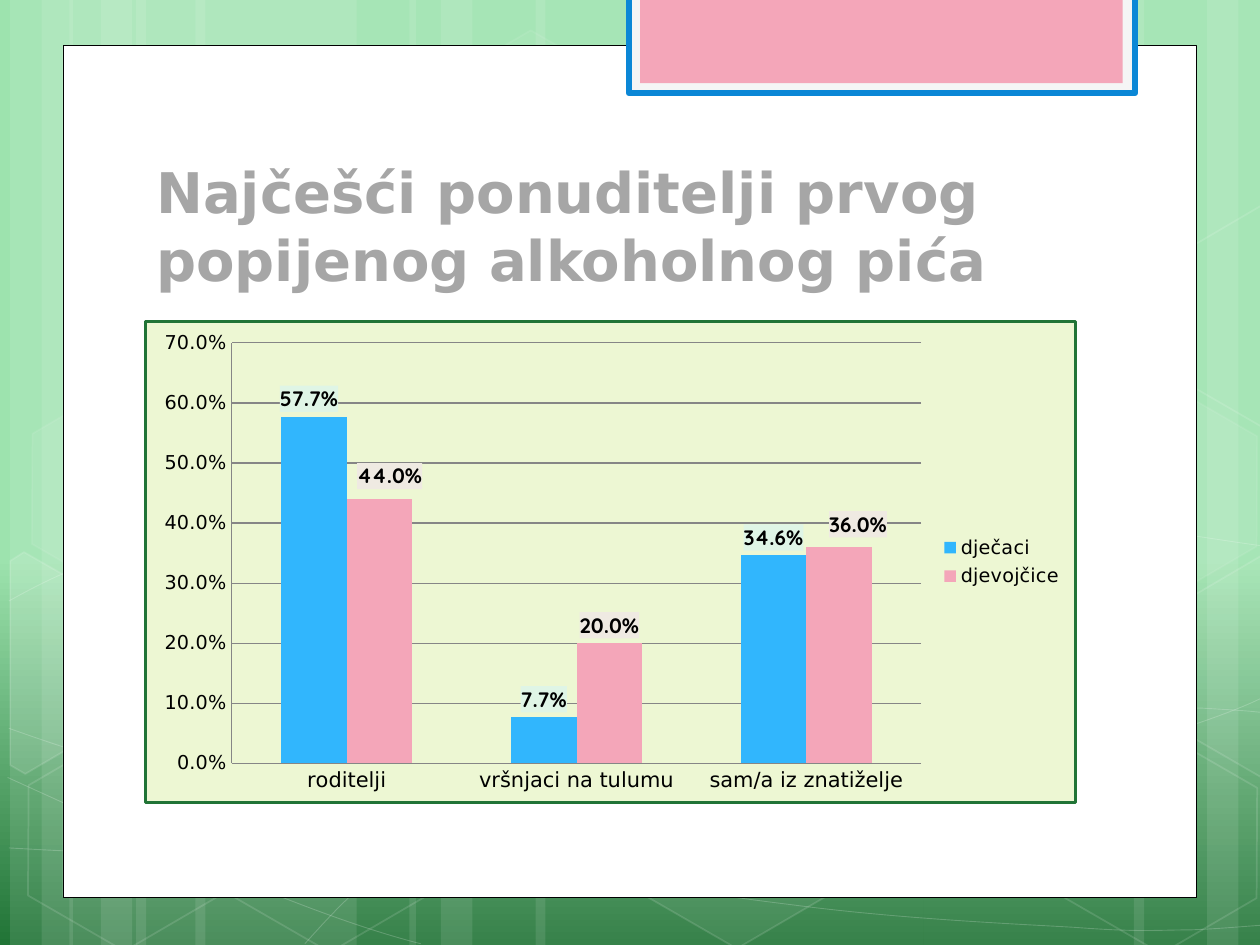
from dataclasses import dataclass
from math import cos, radians, sin

from lxml import etree
from pptx import Presentation
from pptx.chart.data import CategoryChartData
from pptx.dml.color import RGBColor
from pptx.enum.chart import XL_CHART_TYPE, XL_LABEL_POSITION, XL_LEGEND_POSITION, XL_TICK_MARK
from pptx.enum.shapes import MSO_SHAPE
from pptx.enum.text import MSO_ANCHOR, MSO_AUTO_SIZE, PP_ALIGN
from pptx.oxml import parse_xml
from pptx.oxml.ns import nsdecls, qn
from pptx.util import Inches, Pt

RECTANGLE, HEXAGON = MSO_SHAPE.RECTANGLE, MSO_SHAPE.HEXAGON
COLUMN = XL_CHART_TYPE.COLUMN_CLUSTERED
LABEL_ABOVE = XL_LABEL_POSITION.OUTSIDE_END
LEGEND_RIGHT = XL_LEGEND_POSITION.RIGHT
NO_TICKS = XL_TICK_MARK.NONE


@dataclass(frozen=True)
class Theme:
    light: str = "9DE3AE"
    dark: str = "217436"
    white: str = "FFFFFF"
    black: str = "000000"
    title: str = "A6A6A6"
    tab: str = "F5F5F5"
    blue: str = "0B87D6"
    pink: str = "F4A6B9"
    boys: str = "31B6FD"
    chart: str = "EDF7D3"
    grid: str = "868686"
    boys_label: str = "DFF5E6"
    girls_label: str = "EFEAE2"
    font: str = "DejaVu Sans"
    label_font: str = "Quicksand"
    title_size: int = 32
    label_size: int = 12
    axis_size: int = 11


THEME = Theme()
WIDTH, HEIGHT = 10, 7.5
CHART_WIDTH, CHART_HEIGHT = 7.41, 3.84
TILT = 30  # degrees, for all hexagons

# Background bands: left, width
BANDS = [(1.08, 1.75), (0.08, 0.5), (0.33, 0.83), (1.55, 1.75), (0.55, 0.5), (0.8, 0.83),
         (7.33, 1.75), (9.58, 0.5), (9, 0.83), (4.25, 3.08), (3.25, 0.5), (3.5, 0.83)]
# Background waves: start point, then Bézier segments (two controls and an end)
WAVES = [
    [(0.07, 6.73), (0.61, 6.76, 1.15, 6.79, 1.9, 6.78), (2.65, 6.77, 3.58, 6.75, 4.58, 6.65),
     (5.58, 6.55, 7, 6.36, 7.92, 6.17), (8.83, 5.98, 9.77, 5.68, 10.07, 5.51)],
    [(0.07, 4.77), (0.36, 4.61, 0.65, 4.46, 1.21, 4.31), (1.78, 4.16, 2.59, 3.94, 3.47, 3.87),
     (4.36, 3.8, 5.44, 3.79, 6.54, 3.87), (7.64, 3.95, 9.47, 4.26, 10.07, 4.34)],
    [(0.06, 6.17), (1.27, 6.72, 2.47, 7.27, 3.34, 7.49)],
    [(0.07, 5.78), (0.38, 5.89, 0.7, 6, 1.28, 6.16), (1.86, 6.31, 2.73, 6.56, 3.57, 6.73),
     (4.4, 6.9, 5.45, 7.08, 6.28, 7.18), (7.11, 7.29, 8, 7.33, 8.53, 7.36),
     (9.05, 7.4, 9.19, 7.38, 9.45, 7.38), (9.71, 7.37, 9.89, 7.35, 10.07, 7.34)],
    [(2.42, 7.49), (2.6, 7.29, 2.78, 7.09, 3.02, 6.91), (3.26, 6.73, 3.6, 6.53, 3.88, 6.39),
     (4.16, 6.25, 4.33, 6.19, 4.7, 6.09), (5.06, 5.99, 5.73, 5.85, 6.08, 5.78),
     (6.44, 5.71, 6.49, 5.71, 6.8, 5.69), (7.11, 5.66, 7.6, 5.63, 7.94, 5.62),
     (8.29, 5.61, 8.86, 5.62, 8.86, 5.62), (8.86, 5.62, 9.53, 5.62, 9.53, 5.62),
     (9.71, 5.63, 9.88, 5.64, 9.97, 5.65), (10.06, 5.66, 10.03, 5.65, 10.06, 5.66)],
]
# Hexagons: left, top, fill opacity (0 for none), line opacity
HEXAGONS = [(3.34, 0.36, 4, 8), (4.97, 5.89, 6, 12), (0.11, 5.91, 0, 12), (0.14, 3.12, 7, 8),
            (1.74, 5.92, 0, 12), (7.53, 4.53, 10, 12), (8.34, 5.93, 0, 12), (8.34, 3.14, 7, 8)]
# Hexagons cut by the slide's edge: centre, corners after tilting, fill opacity
CUT_HEXAGONS = [
    ((0.36, 5.35), [(0.08, 4.45), (0.19, 4.38), (0.96, 4.82), (0.95, 5.7), (0.2, 6.14),
                    (0.08, 6.07)], 10),
    ((9.85, 5.2), [(9.26, 4.85), (10.01, 4.41), (10.09, 4.46), (10.09, 6.13), (10.02, 6.17),
                   (9.26, 5.73)], 4),
    ((9.85, 2.41), [(9.26, 2.07), (10.01, 1.63), (10.1, 1.68), (10.09, 3.35), (10.02, 3.39),
                    (9.26, 2.95)], 0),
]
CATEGORIES = ["roditelji", "vršnjaci na tulumu", "sam/a iz znatiželje"]
# Series: name, values, colour, label fill, label shifts in inches
SERIES = [
    ("dječaci", [0.577, 0.077, 0.346], THEME.boys, THEME.boys_label,
     [(-0.04, 0), (0, 0), (0, 0)]),
    ("djevojčice", [0.44, 0.2, 0.36], THEME.pink, THEME.girls_label,
     [(0.08, -0.04), (0, 0), (0.15, -0.04)]),
]


def set_opacity(shape, place, opacity):
    if opacity < 100:
        color = shape._element.spPr.find(f"{place}{qn('a:solidFill')}/{qn('a:srgbClr')}")
        etree.SubElement(color, qn("a:alpha")).set("val", str(opacity * 1000))


def paint(shape, fill=None, opacity=100, line=None, line_width=1, line_opacity=100):
    shape.shadow.inherit = False
    if fill and opacity:
        shape.fill.solid()
        shape.fill.fore_color.rgb = RGBColor.from_string(fill)
        set_opacity(shape, "", opacity)
    else:
        shape.fill.background()
    if line:
        shape.line.width = Pt(line_width)
        shape.line.color.rgb = RGBColor.from_string(line)
        set_opacity(shape, qn("a:ln") + "/", line_opacity)
    else:
        shape.line.fill.background()


def add_box(slide, left, top, width, height, kind=RECTANGLE, **style):
    shape = slide.shapes.add_shape(kind, *map(Inches, (left, top, width, height)))
    paint(shape, **style)
    return shape


def add_outline(slide, points, close, **style):
    corners = [(Inches(x), Inches(y)) for x, y in points]
    builder = slide.shapes.build_freeform(*corners[0])
    builder.add_line_segments(corners[1:], close=close)
    shape = builder.convert_to_shape()
    paint(shape, **style)
    return shape


def add_wave(slide, wave):
    points = [wave[0]] + [segment[i:i + 2] for segment in wave[1:] for i in (0, 2, 4)]
    shape = add_outline(slide, points, False,
                        line=THEME.white, line_width=0.5, line_opacity=20)
    # Join each three straight steps into one Bézier segment
    lines = list(shape._element.iter(qn("a:lnTo")))
    for start in range(0, len(lines), 3):
        curve = etree.Element(qn("a:cubicBezTo"))
        lines[start].addprevious(curve)
        for step in lines[start:start + 3]:
            curve.append(step[0])
            step.getparent().remove(step)


def turn(point, centre, degrees):
    x, y = point[0] - centre[0], point[1] - centre[1]
    cosine, sine = cos(radians(degrees)), sin(radians(degrees))
    return centre[0] + x * cosine - y * sine, centre[1] + x * sine + y * cosine


def set_background(slide):
    slide.background.fill.gradient()
    gradient = slide.background._element.find(".//" + qn("a:gradFill"))
    stops = "".join(f'<a:gs pos="{share * 1000}"><a:srgbClr val="{color}"/></a:gs>'
                    for share, color in [(0, THEME.light), (59, THEME.light), (100, THEME.dark)])
    gradient.getparent().replace(gradient, parse_xml(
        f'<a:gradFill {nsdecls("a")} rotWithShape="1"><a:gsLst>{stops}</a:gsLst>'
        '<a:lin ang="5400000" scaled="0"/></a:gradFill>'))


def add_decoration(slide):
    for left, width in BANDS:
        add_box(slide, left, 0, width, HEIGHT, fill=THEME.white, opacity=10)
    for wave in WAVES:
        add_wave(slide, wave)
    for left, top, opacity, line_opacity in HEXAGONS:
        hexagon = add_box(slide, left, top, 1.75, 1.52, HEXAGON, fill=THEME.white,
                          opacity=opacity, line=THEME.white, line_opacity=line_opacity)
        hexagon.rotation = TILT
        hexagon.adjustments[0] = 0.285
    for centre, corners, opacity in CUT_HEXAGONS:
        upright = [turn(corner, centre, -TILT) for corner in corners]
        add_outline(slide, upright, True, fill=THEME.white, opacity=opacity,
                    line=THEME.white, line_opacity=12).rotation = TILT


def set_title(slide, text):
    title = slide.shapes.title
    title.left, title.top, title.width, title.height = map(Inches, (1.14, 1.12, 7.68, 1.25))
    frame = title.text_frame
    frame.text = text
    frame.auto_size, frame.vertical_anchor = MSO_AUTO_SIZE.NONE, MSO_ANCHOR.BOTTOM
    frame.paragraphs[0].alignment = PP_ALIGN.LEFT
    set_font(frame.paragraphs[0].runs[0].font, THEME.title_size, THEME.font, THEME.title, True)
    slide.shapes._spTree.append(title._element)  # in front of the panel


def set_font(font, size, name=THEME.font, color=THEME.black, bold=False):
    font.size, font.name, font.bold = Pt(size), name, bold
    font.color.rgb = RGBColor.from_string(color)


def solid_properties(fill, line=""):
    return parse_xml(f'<c:spPr {nsdecls("c", "a")}><a:solidFill><a:srgbClr val="{fill}"/>'
                     f'</a:solidFill>{line}</c:spPr>')


def manual_layout(x, y, **values):
    values.update(x=x / CHART_WIDTH, y=y / CHART_HEIGHT)
    order = [key for key in ("layoutTarget", "xMode", "yMode", "x", "y", "w", "h") if key in values]
    items = "".join(f'<c:{key} val="{values[key]}"/>' for key in order)
    return parse_xml(f'<c:layout {nsdecls("c")}><c:manualLayout>{items}</c:manualLayout></c:layout>')


def format_labels(series, fill, shifts):
    for index in range(len(shifts)):
        label = series.points[index].data_label
        set_font(label.font, THEME.label_size, THEME.label_font, bold=True)
        label.position = LABEL_ABOVE
    for label, shift in zip(series._element.iter(qn("c:dLbl")), shifts):
        number_format = parse_xml(f'<c:numFmt {nsdecls("c")} formatCode="0.0%" sourceLinked="0"/>')
        for old in label.findall(qn("c:spPr")):
            label.remove(old)
        label[1:1] = [manual_layout(*shift), number_format, solid_properties(fill)]


def add_column_chart(slide):
    data = CategoryChartData(number_format="0.0%")
    data.categories = CATEGORIES
    for name, values, *_ in SERIES:
        data.add_series(name, values)
    frame = map(Inches, (1.14, 2.54, CHART_WIDTH, CHART_HEIGHT))
    chart = slide.shapes.add_chart(COLUMN, *frame, data).chart
    set_font(chart.font, 10, THEME.label_font)
    chart.has_title = False
    chart.has_legend = True
    chart.legend.position, chart.legend.include_in_layout = LEGEND_RIGHT, False
    set_font(chart.legend.font, THEME.axis_size)

    # Axes
    for axis, size in ((chart.category_axis, THEME.label_size), (chart.value_axis, THEME.axis_size)):
        axis.major_tick_mark = axis.minor_tick_mark = NO_TICKS
        set_font(axis.tick_labels.font, size)
        axis.format.line.color.rgb = RGBColor.from_string(THEME.grid)
    values = chart.value_axis
    values.minimum_scale, values.maximum_scale, values.major_unit = 0, 0.7, 0.1
    values.tick_labels.number_format, values.tick_labels.number_format_is_linked = "0.0%", False
    values.major_gridlines.format.line.color.rgb = RGBColor.from_string(THEME.grid)

    # Columns and their labels
    plot = chart.plots[0]
    plot.gap_width, plot.overlap, plot.vary_by_categories = 150, 0, False
    for series, (_, _, color, label_fill, shifts) in zip(plot.series, SERIES):
        series.format.fill.solid()
        series.format.fill.fore_color.rgb = RGBColor.from_string(color)
        format_labels(series, label_fill, shifts)

    # Plot position and chart frame
    space = chart._chartSpace
    area = space.find(".//" + qn("c:plotArea"))
    for old in area.findall(qn("c:layout")):
        area.remove(old)
    area.insert(0, manual_layout(0.69, 0.17, layoutTarget="inner", xMode="edge", yMode="edge",
                                 w=5.49 / CHART_WIDTH, h=3.36 / CHART_HEIGHT))
    border = (f'<a:ln w="{Pt(1.75)}"><a:solidFill><a:srgbClr val="{THEME.dark}"/>'
              '</a:solidFill></a:ln>')
    space.find(qn("c:chart")).addnext(solid_properties(THEME.chart, border))


def main():
    presentation = Presentation()
    presentation.slide_width, presentation.slide_height = Inches(WIDTH), Inches(HEIGHT)
    slide = presentation.slides.add_slide(presentation.slide_layouts[5])
    set_background(slide)
    add_decoration(slide)
    # Panel and tab
    add_box(slide, 0.5, 0.36, 9, 6.76, fill=THEME.white, line=THEME.black, line_width=0.5)
    add_box(slide, 4.99, -0.02, 4.02, 0.76, fill=THEME.tab, line=THEME.blue, line_width=3.35)
    add_box(slide, 5.08, -0.02, 3.83, 0.68, fill=THEME.pink)
    set_title(slide, "Najčešći ponuditelji prvog popijenog alkoholnog pića")
    add_column_chart(slide)
    presentation.save("out.pptx")


if __name__ == "__main__":
    main()
